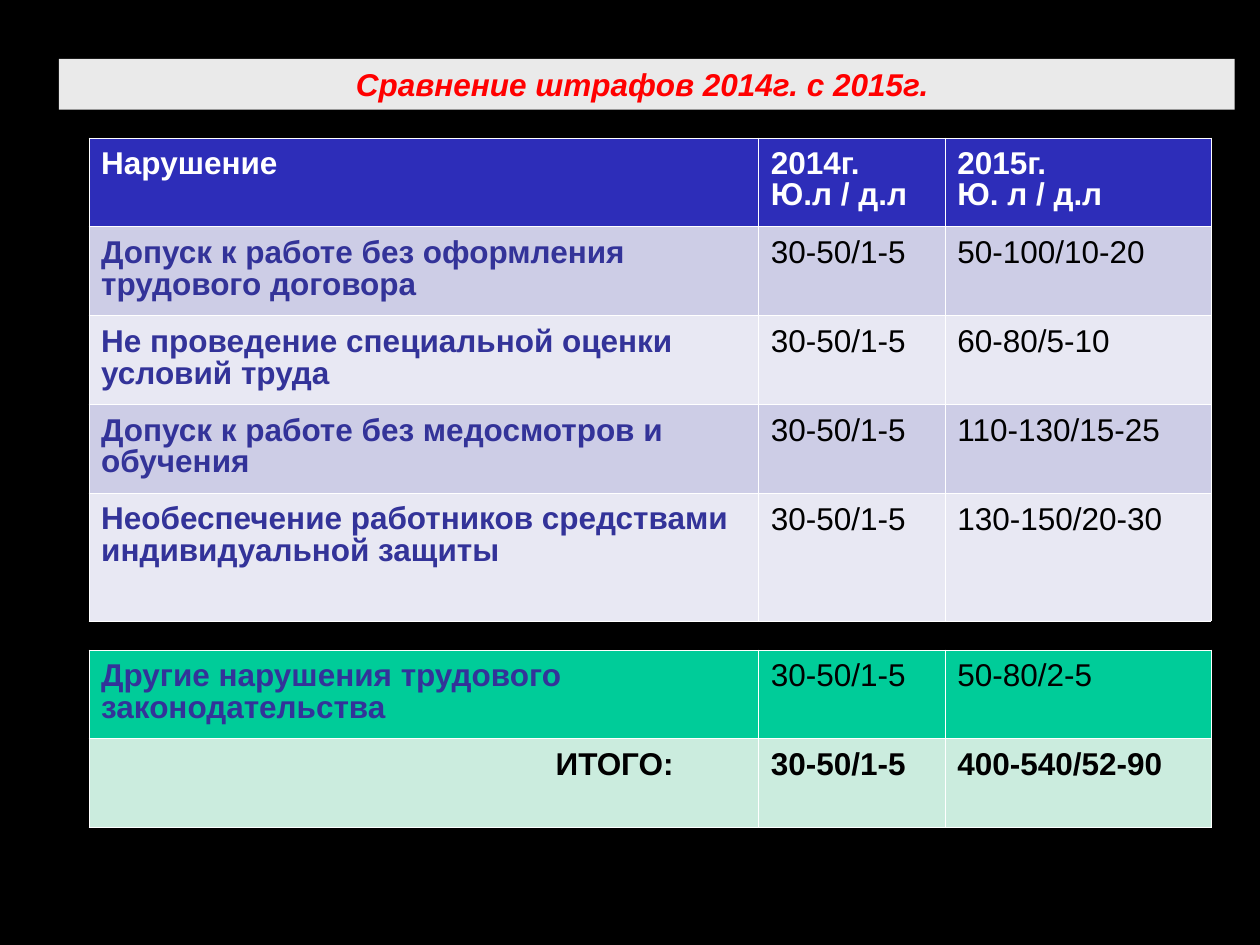
import pptx
import pptx.util
import pptx.dml.color
import pptx.enum.shapes
import pptx.enum.text
import pptx.oxml
import pptx.oxml.ns
import lxml.etree

Cm, Pt = pptx.util.Cm, pptx.util.Pt
ALIGN = pptx.enum.text.PP_ALIGN

COLORS = {
    "background": "000000", "banner": "EAEAEA", "title": "FF0000",
    "header": "2D2DB9", "white": "FFFFFF", "black": "000000",
    "violation": "333399", "dark band": "CDCDE6", "light band": "E8E8F3",
    "other": "00CC99", "total": "CBECDE",
}
FONT, SIZE = "Arial", Pt(18)

TITLE = "Сравнение штрафов 2014г. с 2015г."
FINES = [
    ("header", ["Нарушение"], ["2014г.", "Ю.л / д.л"], ["2015г.", "Ю. л / д.л"]),
    ("dark band", ["Допуск к работе без оформления трудового договора"],
     ["30-50/1-5"], ["50-100/10-20"]),
    ("light band", ["Не проведение специальной оценки условий труда"],
     ["30-50/1-5"], ["60-80/5-10"]),
    ("dark band", ["Допуск к работе без медосмотров и обучения"],
     ["30-50/1-5"], ["110-130/15-25"]),
    ("light band", ["Необеспечение работников средствами индивидуальной защиты"],
     ["30-50/1-5"], ["130-150/20-30"]),
]
SUMMARY = [
    ("other", ["Другие нарушения трудового законодательства"],
     ["30-50/1-5"], ["50-80/2-5"]),
    ("total", ["ИТОГО:"], ["30-50/1-5"], ["400-540/52-90"]),
]

TABLE_LEFT = 1.79
COLUMN_WIDTHS = [13.5, 3.76, 5.36]
ROW_HEIGHT, LAST_FINE_HEIGHT = 1.79, 2.58
THIN, THICK = 0.23, 0.75
TOTAL_RIGHT_INSET = 1.71


def rgb(name):
    return pptx.dml.color.RGBColor.from_string(COLORS[name])


def write(paragraph, text, color, bold, italic=False):
    run = paragraph.add_run()
    run.text = text
    run.font.name, run.font.size = FONT, SIZE
    run.font.bold, run.font.italic = bold, italic
    run.font.color.rgb = rgb(color)


def draw_borders(cell, top, bottom):
    properties = cell._tc.get_or_add_tcPr()
    for side, width in (("L", THIN), ("R", THIN), ("T", top), ("B", bottom)):
        line = lxml.etree.SubElement(
            properties, pptx.oxml.ns.qn(f"a:ln{side}"), w=str(int(Pt(width))))
        fill = lxml.etree.SubElement(line, pptx.oxml.ns.qn("a:solidFill"))
        lxml.etree.SubElement(
            fill, pptx.oxml.ns.qn("a:srgbClr"), val=COLORS["white"])


def fill_cell(cell, band, column, lines, top, bottom):
    is_violation = column == 0 and band not in ("header", "total")
    is_total_label = column == 0 and band == "total"
    draw_borders(cell, top, bottom)
    cell.fill.solid()
    cell.fill.fore_color.rgb = rgb(band)
    cell.margin_left = Cm(0.25)
    cell.margin_right = Cm(TOTAL_RIGHT_INSET if is_total_label else 0.25)
    cell.margin_top = Cm(0.23 if is_violation else 0.25)
    cell.margin_bottom = Cm(0.13)
    color = "white" if band == "header" else "violation" if is_violation else "black"
    bold = is_violation or band in ("header", "total")
    frame = cell.text_frame
    for index, text in enumerate(lines):
        paragraph = frame.add_paragraph() if index else frame.paragraphs[0]
        paragraph.line_spacing = 0.9 if is_violation else 0.87
        paragraph.alignment = ALIGN.RIGHT if is_total_label else ALIGN.LEFT
        write(paragraph, text, color, bold)


def add_fines_table(slide, top, rows, heights):
    table = slide.shapes.add_table(
        len(rows), len(COLUMN_WIDTHS), Cm(TABLE_LEFT), Cm(top),
        Cm(sum(COLUMN_WIDTHS)), Cm(sum(heights))).table
    table.horz_banding = False
    table.first_row = False
    for column, width in zip(table.columns, COLUMN_WIDTHS):
        column.width = Cm(width)
    for index, ((band, *texts), height) in enumerate(zip(rows, heights)):
        table.rows[index].height = Cm(height)
        for column, lines in enumerate(texts):
            fill_cell(table.cell(index, column), band, column, lines,
                      THICK if index == 1 else THIN,
                      THICK if index == 0 else THIN)


def add_banner(slide):
    banner = slide.shapes.add_shape(
        pptx.enum.shapes.MSO_SHAPE.RECTANGLE, Cm(1.19), Cm(1.19), Cm(23.7), Cm(1.02))
    banner.shadow.inherit = False
    banner.fill.solid()
    banner.fill.fore_color.rgb = rgb("banner")
    banner.line.fill.background()
    frame = banner.text_frame
    frame.word_wrap = True
    frame.vertical_anchor = pptx.enum.text.MSO_ANCHOR.MIDDLE
    frame.margin_left, frame.margin_right = Cm(0.25), Cm(0.43)
    frame.margin_top = frame.margin_bottom = Cm(0.13)
    frame.paragraphs[0].alignment = ALIGN.CENTER
    write(frame.paragraphs[0], TITLE, "title", True, True)


def main():
    deck = pptx.Presentation()
    deck.slide_width, deck.slide_height = Cm(25.4), Cm(19.05)
    slide = deck.slides.add_slide(deck.slide_layouts[6])
    slide.background.fill.solid()
    slide.background.fill.fore_color.rgb = rgb("background")
    add_banner(slide)
    add_fines_table(slide, 2.78, FINES,
                    [ROW_HEIGHT] * (len(FINES) - 1) + [LAST_FINE_HEIGHT])
    add_fines_table(slide, 13.1, SUMMARY, [ROW_HEIGHT] * len(SUMMARY))
    deck.save("out.pptx")


if __name__ == "__main__":
    main()
